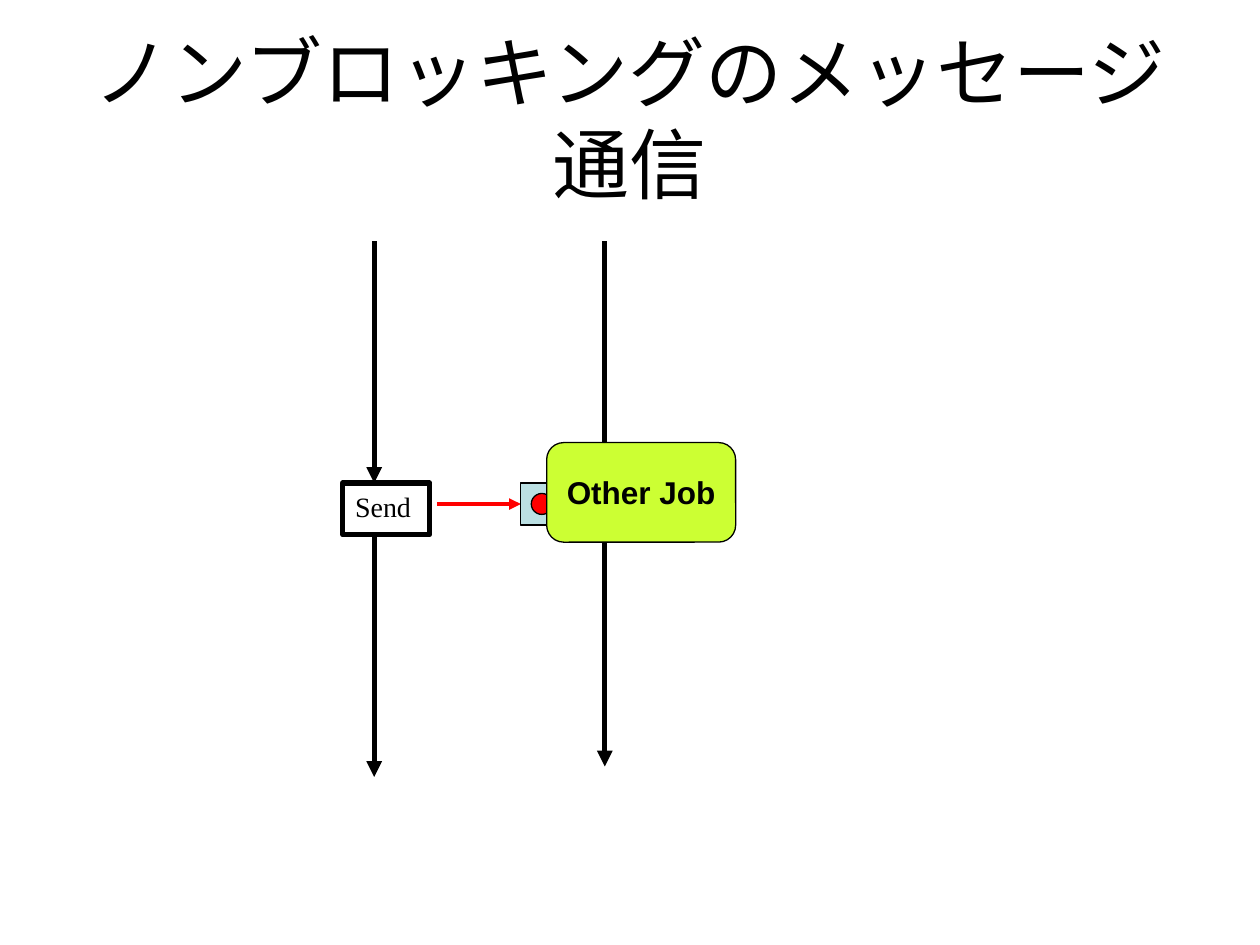
from dataclasses import dataclass

from lxml import etree
from pptx import Presentation
from pptx.dml.color import RGBColor
from pptx.enum.shapes import MSO_CONNECTOR, MSO_SHAPE
from pptx.enum.text import MSO_ANCHOR, MSO_AUTO_SIZE, PP_ALIGN
from pptx.oxml.ns import qn
from pptx.util import Pt


@dataclass(frozen=True)
class Theme:
    black: RGBColor = RGBColor(0x00, 0x00, 0x00)
    red: RGBColor = RGBColor(0xFF, 0x00, 0x00)
    buffer: RGBColor = RGBColor(0xBB, 0xE0, 0xE3)
    job: RGBColor = RGBColor(0xCC, 0xFF, 0x33)
    sans: str = "Arial"
    serif: str = "Times New Roman"
    title_size: float = 44
    job_size: float = 18
    call_size: float = 16
    thin: float = 0.75
    message: float = 2.25
    thick: float = 3


THEME = Theme()
SENDER_X, RECEIVER_X = 213.84, 345.6
START_Y, CALL_Y, MESSAGE_Y = 138, 276, 288
TIMELINE_LENGTH = 138


def format_text(frame, text, font_name, size, align, bold=False):
    frame.text = text
    paragraph = frame.paragraphs[0]
    paragraph.alignment = align
    font = paragraph.runs[0].font
    font.name, font.size, font.bold = font_name, Pt(size), bold
    font.color.rgb = THEME.black


def set_title(slide, text):
    title = slide.shapes.title
    title.left, title.top, title.width, title.height = Pt(36), Pt(21.6), Pt(648), Pt(90)
    frame = title.text_frame
    frame.word_wrap = True
    frame.auto_size = MSO_AUTO_SIZE.NONE
    frame.vertical_anchor = MSO_ANCHOR.MIDDLE
    format_text(frame, text, THEME.sans, THEME.title_size, PP_ALIGN.CENTER)


def add_arrow(slide, start, end, color, weight):
    arrow = slide.shapes.add_connector(
        MSO_CONNECTOR.STRAIGHT, *(Pt(value) for value in (*start, *end)))
    arrow.line.color.rgb = color
    arrow.line.width = Pt(weight)
    etree.SubElement(arrow.line._get_or_add_ln(), qn("a:tailEnd"), type="triangle")
    etree.SubElement(arrow._element.spPr, qn("a:effectLst"))


def add_timeline(slide, x, top):
    add_arrow(slide, (x, top), (x, top + TIMELINE_LENGTH), THEME.black, THEME.thick)


def add_node(slide, kind, bounds, fill=None, weight=THEME.thin):
    node = slide.shapes.add_shape(kind, *(Pt(value) for value in bounds))
    node.shadow.inherit = False
    if fill is None:
        node.fill.background()
    else:
        node.fill.solid()
        node.fill.fore_color.rgb = fill
    node.line.color.rgb = THEME.black
    node.line.width = Pt(weight)
    return node


def add_send_call(slide):
    call = add_node(slide, MSO_SHAPE.RECTANGLE, (195.84, CALL_Y, 49.68, 29.52),
                    weight=THEME.thick)
    frame = call.text_frame
    frame.word_wrap = False
    frame.auto_size = MSO_AUTO_SIZE.SHAPE_TO_FIT_TEXT
    frame.vertical_anchor = MSO_ANCHOR.TOP
    format_text(frame, "Send", THEME.serif, THEME.call_size, PP_ALIGN.LEFT)


def add_message(slide):
    """Draw the message travelling into the receive buffer."""
    buffer_x, buffer_size, dot_size = 297.6, 24, 12
    inset = (buffer_size - dot_size) / 2
    add_arrow(slide, (249.6, MESSAGE_Y), (buffer_x, MESSAGE_Y), THEME.red, THEME.message)
    add_node(slide, MSO_SHAPE.RECTANGLE,
             (buffer_x, CALL_Y, buffer_size, buffer_size), THEME.buffer)
    add_node(slide, MSO_SHAPE.OVAL,
             (buffer_x + inset, CALL_Y + inset, dot_size, dot_size), THEME.red)


def add_other_job(slide):
    job = add_node(slide, MSO_SHAPE.ROUNDED_RECTANGLE, (312.4, 252.9, 108, 56.9), THEME.job)
    job.adjustments[0] = 0.17
    frame = job.text_frame
    frame.word_wrap = False
    frame.vertical_anchor = MSO_ANCHOR.MIDDLE
    format_text(frame, "Other Job", THEME.sans, THEME.job_size, PP_ALIGN.CENTER, bold=True)


def main():
    deck = Presentation()
    deck.slide_width, deck.slide_height = Pt(720), Pt(540)
    slide = deck.slides.add_slide(deck.slide_layouts[5])
    set_title(slide, "ノンブロッキングのメッセージ通信")
    for x, resume_y in ((RECEIVER_X, 300), (SENDER_X, 306)):
        add_timeline(slide, x, START_Y)
        add_timeline(slide, x, resume_y)
    add_send_call(slide)
    add_message(slide)
    add_other_job(slide)
    deck.save("out.pptx")


if __name__ == "__main__":
    main()
